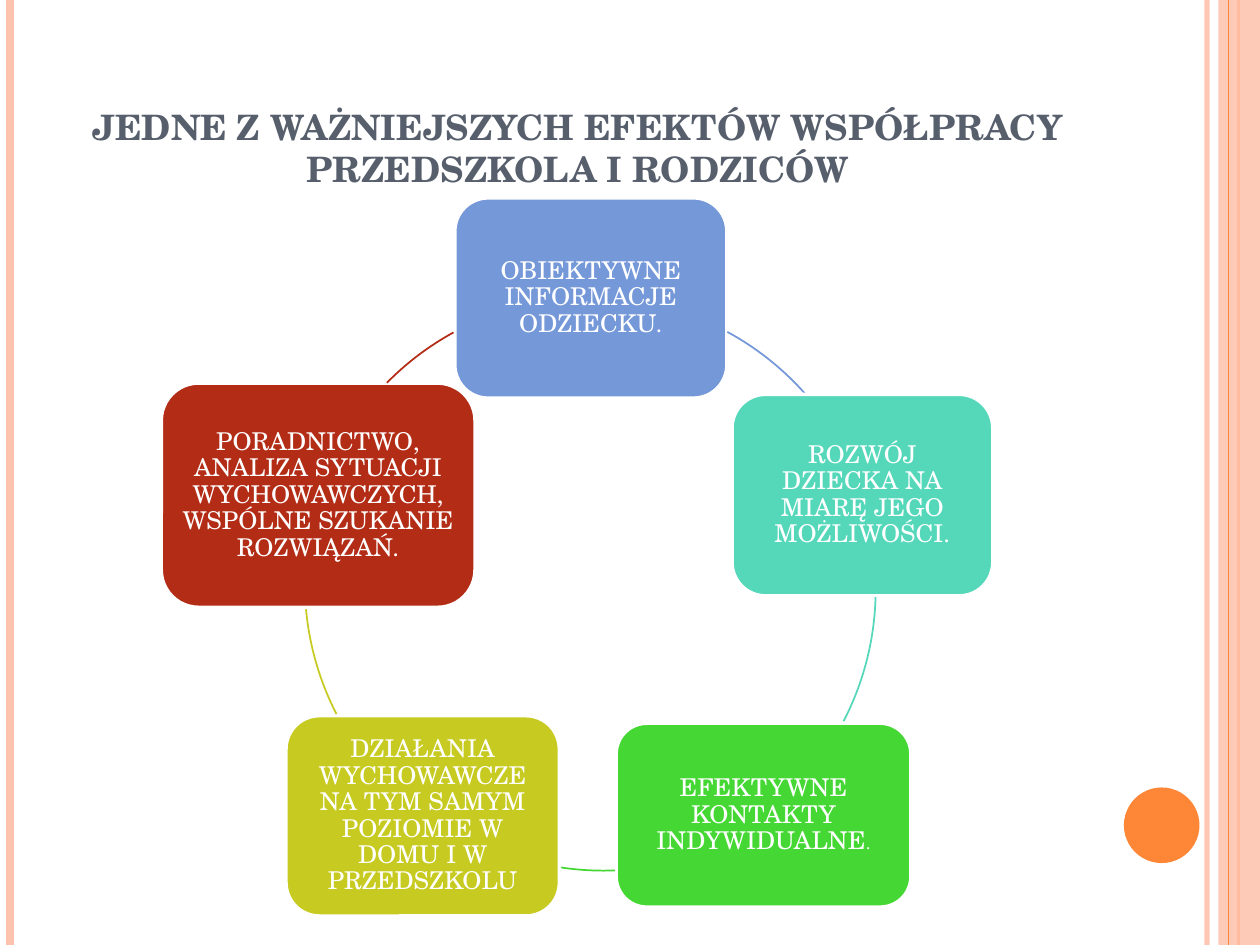
from dataclasses import dataclass

from lxml.etree import SubElement
from pptx import Presentation
from pptx.dml.color import RGBColor
from pptx.enum.shapes import MSO_CONNECTOR as Connector, MSO_SHAPE as Shape
from pptx.enum.text import MSO_ANCHOR as Anchor, PP_ALIGN as Align
from pptx.oxml.ns import qn
from pptx.util import Inches, Pt

WIDTH, HEIGHT = Inches(10), Inches(7.5)
COLUMNS, ROWS = 100, 75
RING_DIAMETER = 45.4


@dataclass(frozen=True)
class Theme:
    font: str = "TeX Gyre Schola"
    title_size: float = 20
    node_size: float = 14
    small_size: float = 10
    title: str = "575F6D"
    white: str = "FFFFFF"
    peach: str = "FEC3AE"
    orange: str = "FE8637"
    blue: str = "7598D9"
    teal: str = "55D7BA"
    green: str = "45D834"
    olive: str = "C7CA20"
    red: str = "B32C16"


THEME = Theme()

# column, width, colour, opacity in percent
STRIPES = [
    (95.8, 3, THEME.peach, 93),
    (0.8, 4.5, THEME.peach, 100),
    (98.3, 1.5, THEME.orange, 100),
]

# box, colour, text runs, ring corner, arc start and end in degrees
NODES = [
    ((36.1, 15.7, 21.6, 15.9), THEME.blue,
     [("OBIEKTYWNE INFORMACJE ODZIECKU.", THEME.node_size)],
     (24.2, 23.6), (298.5, 318.6)),
    ((58.1, 31.3, 20.7, 16), THEME.teal,
     [("ROZWÓJ DZIECKA NA MIARĘ JEGO MOŻLIWOŚCI.", THEME.node_size)],
     (24.1, 24.1), (1.5, 27.5)),
    ((48.9, 57.4, 23.4, 14.6), THEME.green,
     [("EFEKTYWNE KONTAKTY INDYWIDUALNE", THEME.node_size),
      (".", THEME.small_size)],
     (25.2, 23.7), (87.7, 98.8)),
    ((22.7, 56.8, 21.7, 15.9), THEME.olive,
     [("DZIAŁANIA WYCHOWAWCZE NA TYM SAMYM POZIOMIE W DOMU I W PRZEDSZKOLU",
       THEME.node_size)],
     (24.2, 23.6), (152.8, 175)),
    ((12.8, 30.4, 24.9, 17.8), THEME.red,
     [("PORADNICTWO, ANALIZA SYTUACJI WYCHOWAWCZYCH, "
       "WSPÓLNE SZUKANIE ROZWIĄZAŃ.", THEME.node_size)],
     (24.2, 23.6), (224.5, 241.3)),
]


def grid(left, top, width, height):
    """Turn columns and rows into slide lengths."""
    column, row = WIDTH / COLUMNS, HEIGHT / ROWS
    return (round(left * column), round(top * row),
            round(width * column), round(height * row))


def set_opacity(color_format_parent, percent):
    color = color_format_parent.find(".//" + qn("a:srgbClr"))
    SubElement(color, qn("a:alpha")).set("val", str(percent * 1000))


def set_line(line, color, width):
    line.color.rgb = RGBColor.from_string(color)
    line.width = Pt(width)


def add_stripe(slide, column, width, color, opacity=100):
    x = round(WIDTH * column / COLUMNS)
    stripe = slide.shapes.add_connector(Connector.STRAIGHT, x, 0, x, HEIGHT)
    set_line(stripe.line, color, width)
    properties = stripe._element.spPr
    if opacity < 100:
        set_opacity(properties, opacity)
    SubElement(properties, qn("a:effectLst"))


def add_filled(slide, kind, box, color, opacity=100):
    shape = slide.shapes.add_shape(kind, *grid(*box))
    shape.shadow.inherit = False
    shape.fill.solid()
    shape.fill.fore_color.rgb = RGBColor.from_string(color)
    if opacity < 100:
        set_opacity(shape._element.spPr, opacity)
    shape.line.fill.background()
    return shape


def add_run(paragraph, text, size, color, bold=False):
    run = paragraph.add_run()
    run.text = text
    run.font.name = THEME.font
    run.font.size = Pt(size)
    run.font.bold = bold
    run.font.color.rgb = RGBColor.from_string(color)


def add_title(slide, lines):
    frame = slide.shapes.add_textbox(*grid(5, 3, 81.7, 12.5)).text_frame
    frame.word_wrap = True
    frame.vertical_anchor = Anchor.BOTTOM
    paragraph = frame.paragraphs[0]
    paragraph.alignment = Align.CENTER
    for index, line in enumerate(lines):
        if index:
            paragraph.add_line_break()
        add_run(paragraph, line, THEME.title_size, THEME.title, bold=True)


def add_node(slide, box, color, runs):
    node = add_filled(slide, Shape.ROUNDED_RECTANGLE, box, color)
    set_line(node.line, THEME.white, 2)
    frame = node.text_frame
    frame.word_wrap = True
    frame.vertical_anchor = Anchor.MIDDLE
    frame.margin_left = frame.margin_right = Inches(0.06)
    frame.margin_top = frame.margin_bottom = Inches(0.06)
    paragraph = frame.paragraphs[0]
    paragraph.alignment = Align.CENTER
    paragraph.line_spacing = 0.9
    for text, size in runs:
        add_run(paragraph, text, size, THEME.white)


def add_arc(slide, corner, angles, color):
    """Draw the part of the ring between two angles, clockwise from the right."""
    arc = slide.shapes.add_shape(
        Shape.ARC, *grid(*corner, RING_DIAMETER, RING_DIAMETER))
    arc.shadow.inherit = False
    arc.fill.background()
    set_line(arc.line, color, 1)
    for index, degrees in enumerate(angles):
        # Angles are stored in 1/60000 degree, adjustments in 1/100000.
        arc.adjustments[index] = degrees * 0.6


def add_decoration(slide):
    for stripe in STRIPES:
        add_stripe(slide, *stripe)
    add_filled(slide, Shape.RECTANGLE, (96.7, 0, 3.3, ROWS), THEME.peach, 87)
    add_stripe(slide, 97.5, 0.75, THEME.orange)
    add_filled(slide, Shape.OVAL, (89.2, 62.5, 6, 6), THEME.orange)


def main():
    presentation = Presentation()
    presentation.slide_width, presentation.slide_height = WIDTH, HEIGHT
    slide = presentation.slides.add_slide(presentation.slide_layouts[6])
    add_decoration(slide)
    add_title(slide, ["JEDNE Z WAŻNIEJSZYCH EFEKTÓW WSPÓŁPRACY",
                      "PRZEDSZKOLA I RODZICÓW"])
    for box, color, runs, corner, angles in NODES:
        add_node(slide, box, color, runs)
        add_arc(slide, corner, angles, color)
    presentation.save("out.pptx")


if __name__ == "__main__":
    main()
